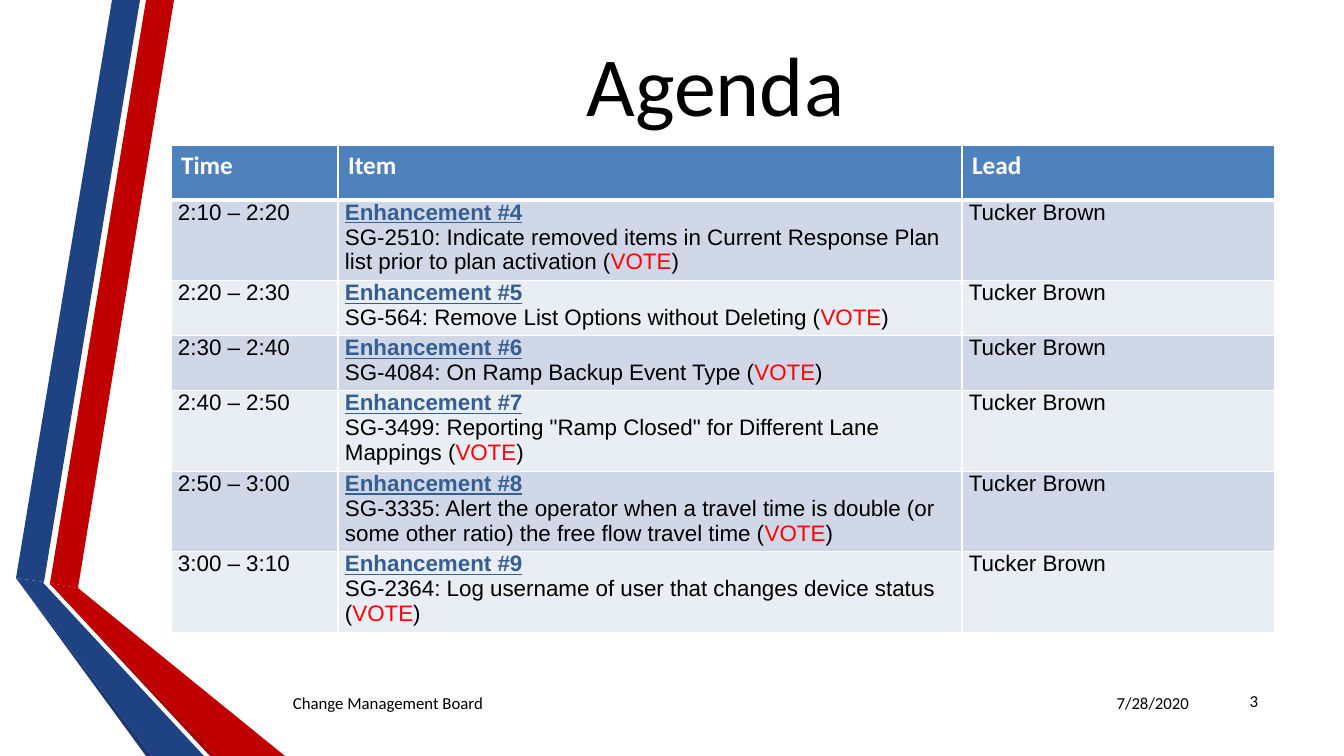
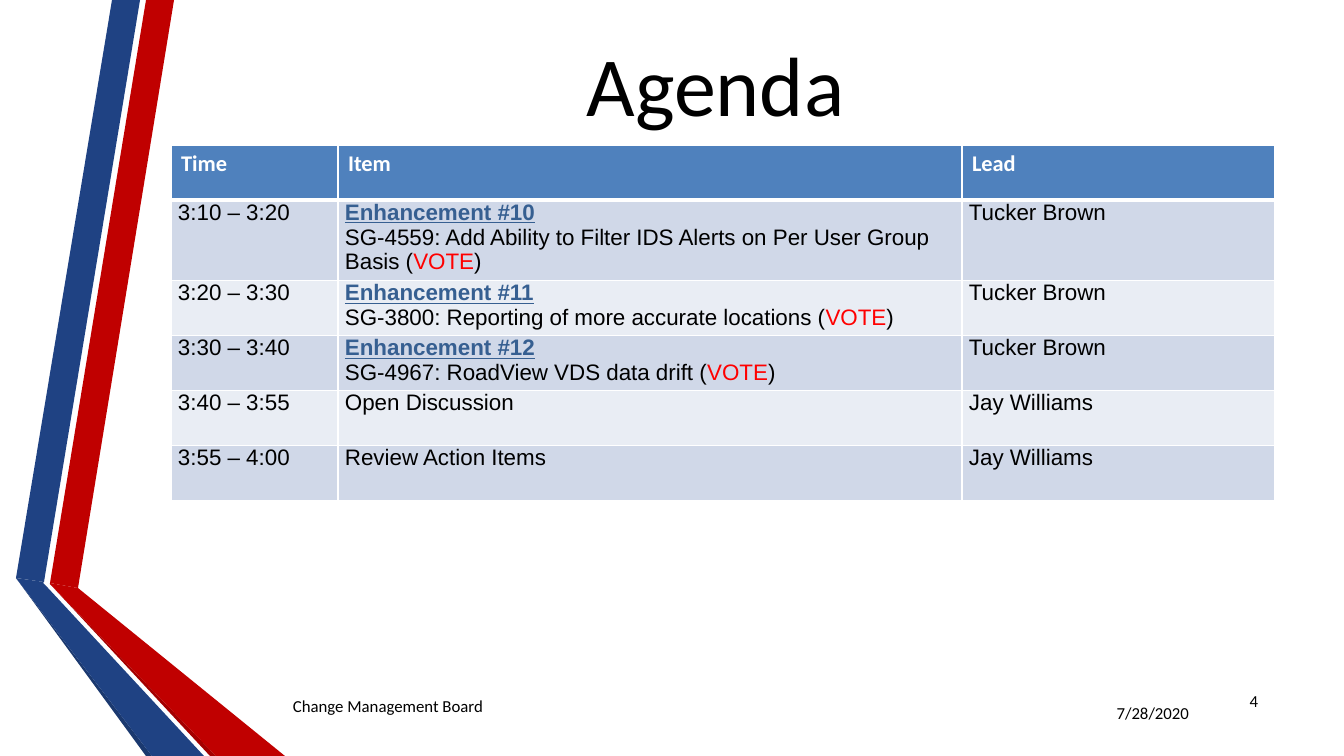
import dataclasses

import pptx
import pptx.dml.color
import pptx.enum.text
import pptx.oxml
import pptx.oxml.ns
import pptx.util


@dataclasses.dataclass(frozen=True)
class Theme:
    black: str = "000000"
    white: str = "FFFFFF"
    vote: str = "FF0000"
    heading: str = "365F91"
    header_fill: str = "4F81BD"
    row_fills: tuple = ("D0D8E8", "E9EDF4")
    red: str = "C00000"
    dark_red: str = "A40000"
    blue: str = "1F4283"
    dark_blue: str = "1B396F"
    display_font: str = "Calibri"
    body_font: str = "Arial"
    title_size: int = 60
    body_size: int = 16
    footer_size: int = 12


theme = Theme()
PX = 12192000 / 1344
RGB = pptx.dml.color.RGBColor.from_string
ALIGN = pptx.enum.text.PP_ALIGN
MIDDLE = pptx.enum.text.MSO_ANCHOR.MIDDLE


def add_run(paragraph, text, color, **format_values):
    run = paragraph.add_run()
    run.text = text
    run.font.color.rgb = RGB(color)
    for name, value in format_values.items():
        setattr(run.font, name, value)


def style_cell(cell, fill, top_width, bottom_width):
    properties = cell._tc.get_or_add_tcPr()
    for side, width in (("L", 1), ("R", 1), ("T", top_width), ("B", bottom_width)):
        properties.append(pptx.oxml.parse_xml(
            f'<a:ln{side} {pptx.oxml.ns.nsdecls("a")} w="{pptx.util.Pt(width)}">'
            f'<a:solidFill><a:srgbClr val="{theme.white}"/></a:solidFill></a:ln{side}>'))
    cell.fill.solid()
    cell.fill.fore_color.rgb = RGB(fill)


ribbons = [
    (theme.red, [(50, 583), (78, 588), (174, 0), (146, 0)]),
    (theme.blue, [(140, 0), (112, 0), (16, 578), (44, 582)]),
    (theme.dark_blue, [(16, 578), (146, 756), (152, 756)]),
    (theme.dark_red, [(50, 584), (210, 756), (216, 756)]),
    (theme.red, [(50, 584), (216, 756), (285, 756), (78, 588), (50, 583)]),
    (theme.blue, [(204, 756), (48, 588), (43, 583), (44, 582), (16, 578), (152, 756)]),
]

headers = ["Time", "Item", "Lead"]
column_widths = [167, 624, 313]
row_height = 55

agendas = [
    {
        "number": "3", "header_size": 18, "date_span": (683, 40), "board_span": (683, 40),
        "rows": [
            ("2:10 – 2:20", "Enhancement #4", "SG-2510: Indicate removed items in Current Response Plan list prior to plan activation", "Tucker Brown"),
            ("2:20 – 2:30", "Enhancement #5", "SG-564: Remove List Options without Deleting", "Tucker Brown"),
            ("2:30 – 2:40", "Enhancement #6", "SG-4084: On Ramp Backup Event Type", "Tucker Brown"),
            ("2:40 – 2:50", "Enhancement #7", 'SG-3499: Reporting "Ramp Closed" for Different Lane Mappings', "Tucker Brown"),
            ("2:50 – 3:00", "Enhancement #8", "SG-3335: Alert the operator when a travel time is double (or some other ratio) the free flow travel time", "Tucker Brown"),
            ("3:00 – 3:10", "Enhancement #9", "SG-2364: Log username of user that changes device status", "Tucker Brown"),
        ],
    },
    {
        "number": "4", "header_size": 16, "date_span": (620, 186), "board_span": (572, 268),
        "rows": [
            ("3:10 – 3:20", "Enhancement #10", "SG-4559: Add Ability to Filter IDS Alerts on Per User Group Basis", "Tucker Brown"),
            ("3:20 – 3:30", "Enhancement #11", "SG-3800: Reporting of more accurate locations", "Tucker Brown"),
            ("3:30 – 3:40", "Enhancement #12", "SG-4967: RoadView VDS data drift", "Tucker Brown"),
            ("3:40 – 3:55", None, "Open Discussion", "Jay Williams"),
            ("3:55 – 4:00", None, "Review Action Items", "Jay Williams"),
        ],
    },
]

presentation = pptx.Presentation()
presentation.slide_width = round(1344 * PX)
presentation.slide_height = round(756 * PX)
body_format = {"name": theme.body_font, "size": pptx.util.Pt(theme.body_size)}

for agenda in agendas:
    slide = presentation.slides.add_slide(presentation.slide_layouts[6])

    for color, points in ribbons:
        builder = slide.shapes.build_freeform(*points[0], scale=PX)
        builder.add_line_segments(points[1:], close=True)
        ribbon = builder.convert_to_shape()
        ribbon.shadow.inherit = False
        ribbon.fill.solid()
        ribbon.fill.fore_color.rgb = RGB(color)
        ribbon.line.fill.background()

    labels = [
        ("Agenda", 163, (26, 113), 1105, theme.title_size, ALIGN.CENTER),
        ("7/28/2020", 1073, agenda["date_span"], 126, theme.footer_size, ALIGN.RIGHT),
        ("Change Management Board", 283, agenda["board_span"], 781, theme.footer_size, ALIGN.LEFT),
        (agenda["number"], 1208, (681, 40), 60, theme.footer_size, ALIGN.RIGHT),
    ]
    for text, left, (top, height), width, size, alignment in labels:
        box = slide.shapes.add_textbox(*(round(length * PX) for length in (left, top, width, height)))
        frame = box.text_frame
        frame.word_wrap = True
        frame.vertical_anchor = MIDDLE
        paragraph = frame.paragraphs[0]
        paragraph.alignment = alignment
        add_run(paragraph, text, theme.black, name=theme.display_font, size=pptx.util.Pt(size))

    rows = agenda["rows"]
    row_count = len(rows) + 1
    bounds = (171, 145, sum(column_widths), row_count * row_height)
    table = slide.shapes.add_table(
        row_count, len(headers), *(round(length * PX) for length in bounds)).table
    table.first_row = False
    table.horz_banding = False
    for column, width in zip(table.columns, column_widths):
        column.width = round(width * PX)
    for row in table.rows:
        row.height = round(row_height * PX)

    for column_index, header in enumerate(headers):
        cell = table.cell(0, column_index)
        style_cell(cell, theme.header_fill, 1, 3)
        add_run(cell.text_frame.paragraphs[0], header, theme.white, bold=True,
                name=theme.display_font, size=pptx.util.Pt(agenda["header_size"]))

    for row_index, (time, heading, item, lead) in enumerate(rows, 1):
        for column_index, text in enumerate((time, item, lead)):
            cell = table.cell(row_index, column_index)
            cell.margin_left = cell.margin_right = round(7 * PX)
            cell.margin_top = cell.margin_bottom = 0
            style_cell(cell, theme.row_fills[(row_index - 1) % 2], 3 if row_index == 1 else 1, 1)
            paragraph = cell.text_frame.paragraphs[0]
            if column_index == 1 and heading:
                add_run(paragraph, heading, theme.heading, bold=True, underline=True, **body_format)
                paragraph = cell.text_frame.add_paragraph()
                add_run(paragraph, text + " (", theme.black, **body_format)
                add_run(paragraph, "VOTE", theme.vote, **body_format)
                add_run(paragraph, ")", theme.black, **body_format)
            else:
                add_run(paragraph, text, theme.black, **body_format)

presentation.save("out.pptx")
